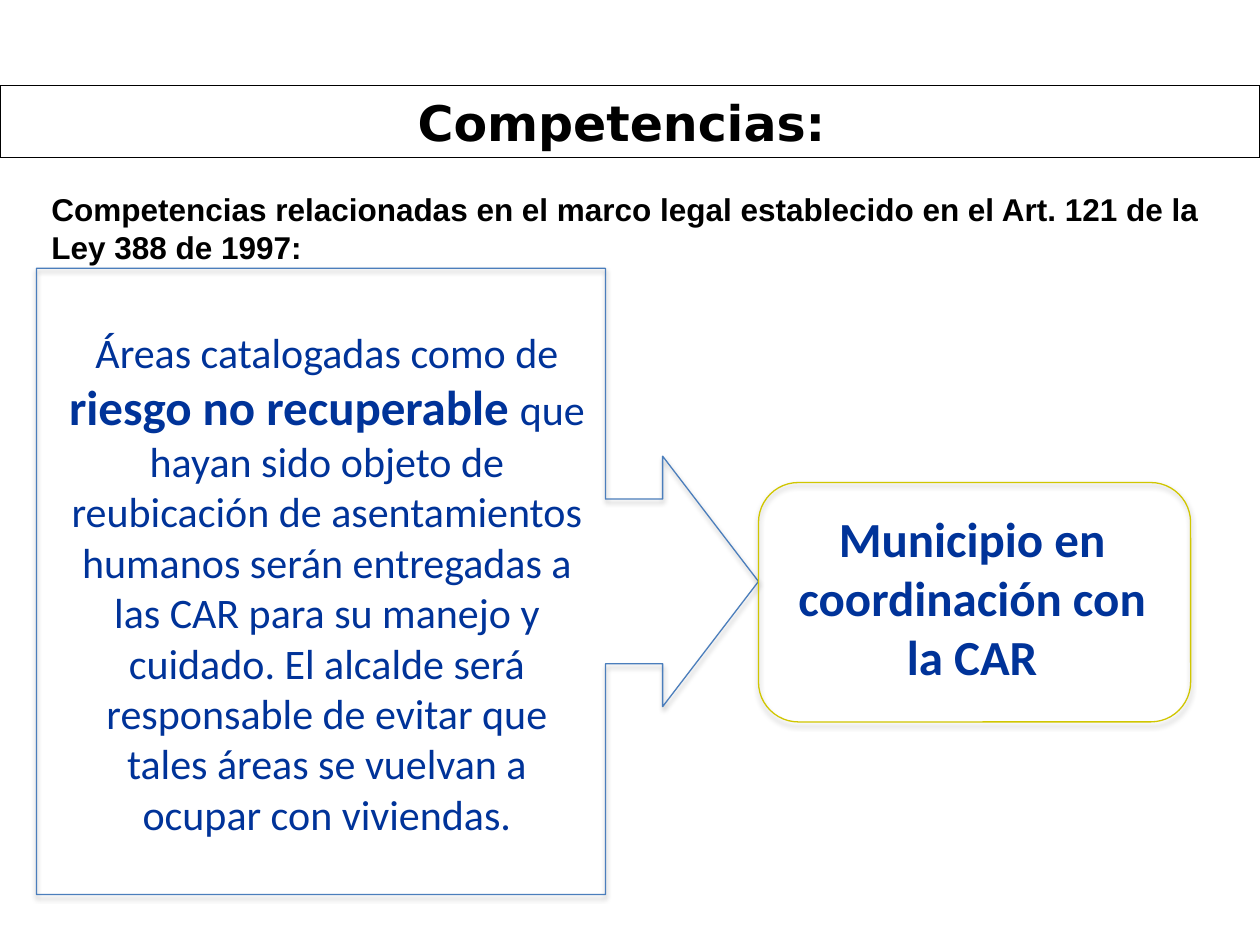
from lxml.etree import SubElement
from pptx import Presentation
from pptx.dml.color import RGBColor
from pptx.enum.shapes import MSO_SHAPE as SHAPE
from pptx.enum.text import MSO_ANCHOR as ANCHOR, MSO_AUTO_SIZE as AUTO, PP_ALIGN as ALIGN
from pptx.oxml.ns import qn
from pptx.util import Inches, Pt

BLACK, NAVY, BLUE, OLIVE = "000000", "003399", "4B7EBC", "D0C600"

# Runs: text, size, bold
TITLE = [("Competencias: ", 28, True)]
INTRO = [("Competencias relacionadas en el marco legal establecido en el "
          "Art. 121 de la Ley 388 de 1997:", 18, True)]
AREAS = [
    ("Áreas catalogadas como de ", 24, False),
    ("riesgo no recuperable ", 28, True),
    ("que hayan sido objeto de reubicación de asentamientos humanos serán "
     "entregadas a las CAR para su manejo y cuidado. El alcalde será responsable "
     "de evitar que tales áreas se vuelvan a ocupar con viviendas.", 24, False),
]
AUTHORITY = [("Municipio en coordinación con la CAR", 28, True)]


def rgb(color):
    return RGBColor.from_string(color)


def write(shape, runs, font, color, align, anchor=ANCHOR.TOP):
    frame = shape.text_frame
    frame.word_wrap = True
    frame.auto_size = AUTO.SHAPE_TO_FIT_TEXT
    frame.vertical_anchor = anchor
    paragraph = frame.paragraphs[0]
    paragraph.alignment = align
    for text, size, bold in runs:
        run = paragraph.add_run()
        run.text = text
        run.font.name, run.font.size, run.font.bold = font, Pt(size), bold
        run.font.color.rgb = rgb(color)


def add_text(shapes, box, *style):
    write(shapes.add_textbox(*map(Inches, box)), *style)


def add_outline(shapes, kind, box, color, adjustments=()):
    """Add an unfilled shape with a thin line and no shadow."""
    shape = shapes.add_shape(kind, *map(Inches, box))
    for i, value in enumerate(adjustments):
        shape.adjustments[i] = value
    shape.fill.background()
    shape.line.color.rgb = rgb(color)
    shape.line.width = Pt(0.75)
    shape.shadow.inherit = False
    return shape


def drop_shadow(shape):
    effects = shape._element.spPr.find(qn("a:effectLst"))
    shadow = SubElement(effects, qn("a:outerShdw"), blurRad=str(Pt(3.1)),
                        dist=str(Pt(1.8)), dir=str(90 * 60000), rotWithShape="0")
    tint = SubElement(shadow, qn("a:srgbClr"), val=BLACK)
    SubElement(tint, qn("a:alpha"), val="35000")


prs = Presentation()
prs.slide_width, prs.slide_height = Inches(10), Inches(7.5)
shapes = prs.slides.add_slide(prs.slide_layouts[6]).shapes

add_text(shapes, (0.31, 1.46, 9.59, 0.71), INTRO, "Arial", BLACK, ALIGN.LEFT)

callout = add_outline(shapes, SHAPE.RIGHT_ARROW_CALLOUT, (0.29, 2.13, 5.73, 4.97),
                      BLUE, (0.263, 0.2, 0.153, 0.788))
drop_shadow(callout)
add_text(shapes, (0.43, 2.54, 4.33, 4.21), AREAS, "Calibri", NAVY, ALIGN.CENTER)

authority = shapes.add_group_shape().shapes
drop_shadow(add_outline(authority, SHAPE.ROUNDED_RECTANGLE, (6.02, 3.83, 3.43, 1.9), OLIVE))
add_text(authority, (6.1, 3.99, 3.23, 1.51), AUTHORITY, "Calibri", NAVY, ALIGN.CENTER)

banner = add_outline(shapes, SHAPE.RECTANGLE, (0, 0.68, 10, 0.57), BLACK)
write(banner, TITLE, "DejaVu Sans", BLACK, ALIGN.CENTER, ANCHOR.MIDDLE)

prs.save("out.pptx")
